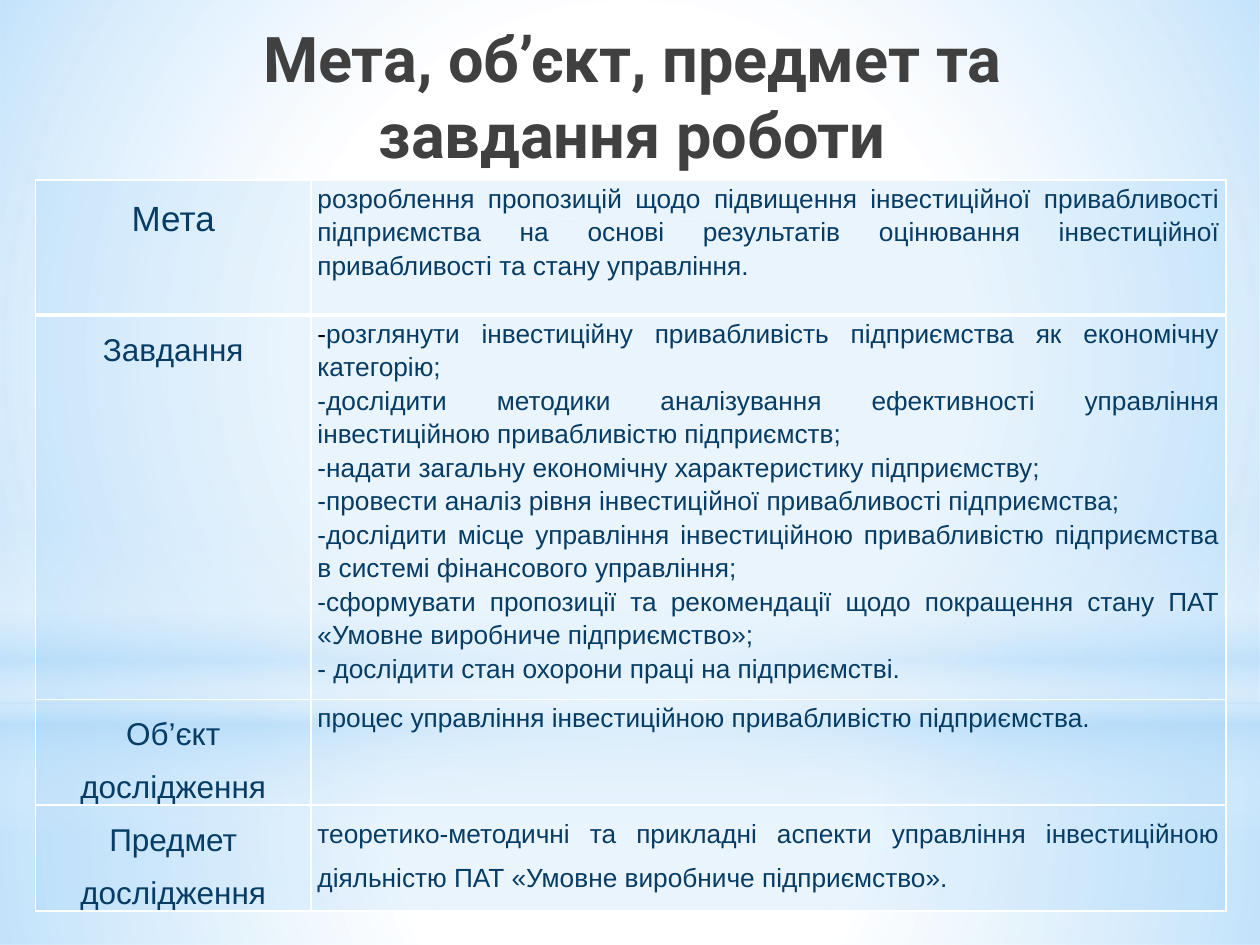
from lxml import etree
from pptx import Presentation
from pptx.dml.color import RGBColor
from pptx.enum.shapes import MSO_SHAPE as Shape
from pptx.enum.text import MSO_ANCHOR as Anchor, PP_ALIGN as Align
from pptx.oxml.ns import qn
from pptx.util import Inches, Pt

WHITE, BLUE, NAVY = "FFFFFF", "B4DCFA", "073C65"
CELL_BLUE, TITLE_GRAY = "8CC9F7", "404040"

BACKDROP = [
    (Shape.RECTANGLE, (0, 5.58, 10, 1.92), True,
     [(0, WHITE, 91), (37, WHITE, 76), (100, BLUE, 79)]),
    (Shape.RECTANGLE, (0, 0, 10, 5.58), True,
     [(0, WHITE, 89), (48, WHITE, 62), (100, BLUE, 79)]),
    (Shape.RECTANGLE, (0, 4.12, 10, 2.5), False,
     [(0, WHITE, 0), (29, WHITE, 30), (45, BLUE, 40),
      (55, WHITE, 26), (65, BLUE, 60), (100, WHITE, 0)]),
    (Shape.OVAL, (0, 1.75, 10, 5.58), True,
     [(0, WHITE, 100), (56, WHITE, 0)]),
]

COLUMN_WIDTHS = [2.19, 7.26]
ROWS = [
    ("Мета", 20, 1.07, 1.15, [
        "розроблення пропозицій щодо підвищення інвестиційної привабливості "
        "підприємства на основі результатів оцінювання інвестиційної "
        "привабливості та стану управління."]),
    ("Завдання", 18, 3.05, 1.15, [
        "-розглянути інвестиційну привабливість підприємства як економічну категорію;",
        "-дослідити методики аналізування ефективності управління "
        "інвестиційною привабливістю підприємств;",
        "-надати загальну економічну характеристику підприємству;",
        "-провести аналіз рівня інвестиційної привабливості підприємства;",
        "-дослідити місце управління інвестиційною привабливістю підприємства "
        "в системі фінансового управління;",
        "-сформувати пропозиції та рекомендації щодо покращення стану ПАТ "
        "«Умовне виробниче підприємство»;",
        "- дослідити стан охорони праці на підприємстві."]),
    ("Об’єкт дослідження", 18, 0.84, 1.15, [
        "процес управління інвестиційною привабливістю підприємства."]),
    ("Предмет дослідження", 18, 0.84, 1.5, [
        "теоретико-методичні та прикладні аспекти управління інвестиційною "
        "діяльністю ПАТ «Умовне виробниче підприємство»."]),
]


def color(value):
    return RGBColor.from_string(value)


def add_child(parent, tag, **attributes):
    child = etree.SubElement(parent, qn(tag))
    for name, value in attributes.items():
        child.set(name, str(value))
    return child


def add_color(parent, value, alpha):
    add_child(add_child(parent, "a:srgbClr", val=value), "a:alpha", val=alpha * 1000)


def set_gradient(shape, stops, radial):
    shape.fill.gradient()
    gradient = shape._element.spPr.find(qn("a:gradFill"))
    for child in list(gradient):
        gradient.remove(child)
    stop_list = add_child(gradient, "a:gsLst")
    for position, value, alpha in stops:
        add_color(add_child(stop_list, "a:gs", pos=position * 1000), value, alpha)
    if radial:
        add_child(add_child(gradient, "a:path", path="circle"), "a:fillToRect",
                  l=50000, t=50000, r=50000, b=50000)
    else:
        add_child(gradient, "a:lin", ang=5400000, scaled=0)


def add_backdrop(slide):
    for kind, box, radial, stops in BACKDROP:
        shape = slide.shapes.add_shape(kind, *map(Inches, box))
        shape.shadow.inherit = False
        shape.line.fill.background()
        set_gradient(shape, stops, radial)


def format_paragraph(paragraph, size, alignment, spacing):
    paragraph.alignment = alignment
    paragraph.line_spacing = spacing
    for run in paragraph.runs:
        run.font.size = Pt(size)
        run.font.name = "Arial"
        run.font.color.rgb = color(NAVY)


def add_title(slide, left, top, width, height):
    title = slide.shapes.title
    title.left, title.top = Inches(left), Inches(top)
    title.width, title.height = Inches(width), Inches(height)
    frame = title.text_frame
    frame.text = "Мета, об’єкт, предмет та завдання роботи"
    frame.word_wrap = True
    frame.vertical_anchor = Anchor.MIDDLE
    paragraph = frame.paragraphs[0]
    paragraph.alignment = Align.CENTER
    font = paragraph.runs[0].font
    font.name, font.size, font.bold = "Roboto", Pt(36), True
    font.color.rgb = color(TITLE_GRAY)
    slide.shapes._spTree.append(title._element)


def style_cell(cell, top_width, bottom_width):
    properties = cell._tc.get_or_add_tcPr()
    widths = {"L": 1, "R": 1, "T": top_width, "B": bottom_width}
    for side, width in widths.items():
        line = add_child(properties, f"a:ln{side}", w=Pt(width))
        add_color(add_child(line, "a:solidFill"), WHITE, 100)
    add_color(add_child(properties, "a:solidFill"), CELL_BLUE, 19)
    cell.margin_left = cell.margin_right = Inches(0.05)
    cell.margin_top = cell.margin_bottom = 0


def fill_cell(cell, lines, size, alignment, spacing):
    cell.text_frame.text = "\n".join(lines)
    for paragraph in cell.text_frame.paragraphs:
        format_paragraph(paragraph, size, alignment, spacing)


def add_summary_table(slide, left, top):
    height = sum(row[2] for row in ROWS)
    table = slide.shapes.add_table(
        len(ROWS), len(COLUMN_WIDTHS), Inches(left), Inches(top),
        Inches(sum(COLUMN_WIDTHS)), Inches(height)).table
    table.first_row = table.horz_banding = False
    for column, width in zip(table.columns, COLUMN_WIDTHS):
        column.width = Inches(width)
    for index, (label, size, row_height, spacing, lines) in enumerate(ROWS):
        table.rows[index].height = Inches(row_height)
        label_cell, text_cell = table.rows[index].cells
        fill_cell(label_cell, [label], size, Align.CENTER, 1.5)
        fill_cell(text_cell, lines, 15, Align.JUSTIFY, spacing)
        for cell in (label_cell, text_cell):
            style_cell(cell, 3 if index == 1 else 1, 3 if index == 0 else 1)
    first_task = table.cell(1, 1).text_frame.paragraphs[0]
    task_text = first_task.text[1:]
    first_task.runs[0].text = "-"
    first_task.add_run().text = task_text
    format_paragraph(first_task, 15, Align.JUSTIFY, 1.15)
    first_task.runs[0].font.color.rgb = color("000000")


def main():
    presentation = Presentation()
    presentation.slide_width, presentation.slide_height = Inches(10), Inches(7.5)
    slide = presentation.slides.add_slide(presentation.slide_layouts[5])
    slide.background.fill.solid()
    slide.background.fill.fore_color.rgb = color(WHITE)
    add_backdrop(slide)
    add_title(slide, 1.46, 0.13, 7.12, 1.25)
    add_summary_table(slide, 0.28, 1.43)
    presentation.save("out.pptx")


if __name__ == "__main__":
    main()
